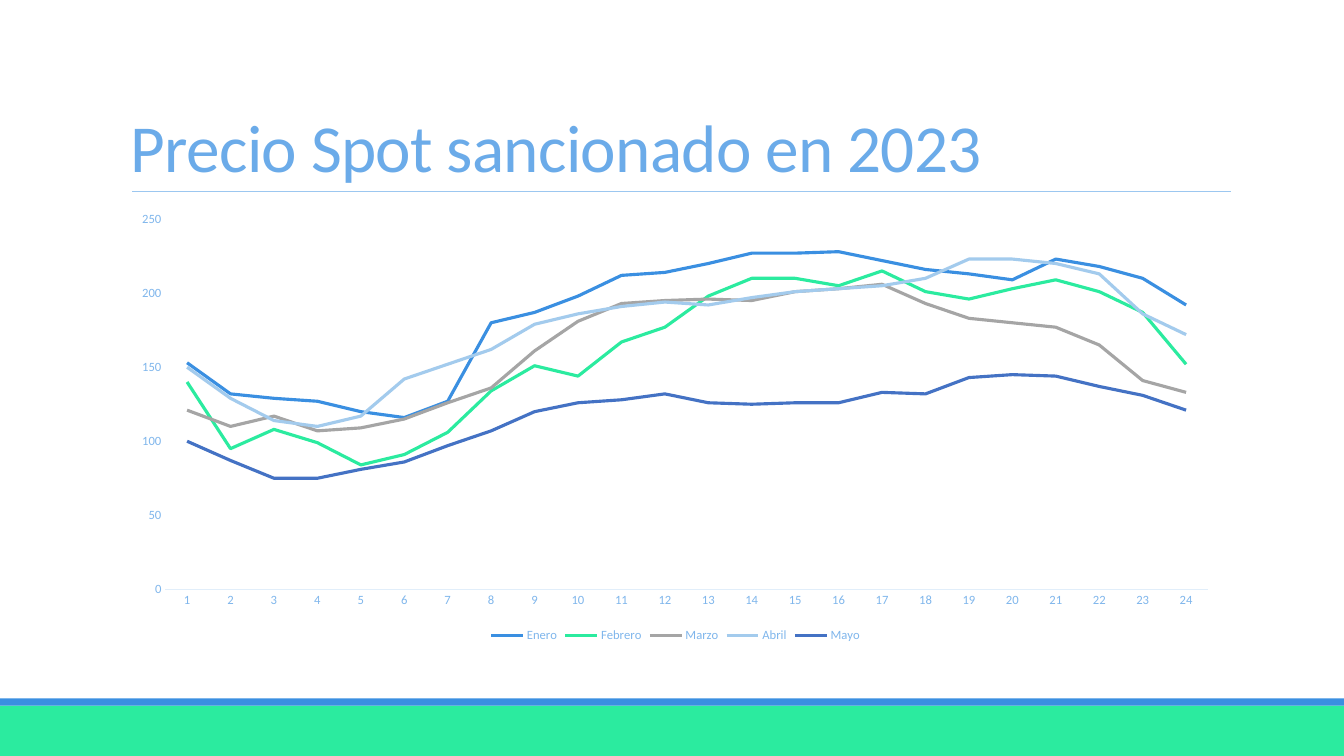
from lxml.etree import SubElement
from pptx import Presentation
from pptx.chart.data import CategoryChartData
from pptx.dml.color import RGBColor
from pptx.enum.chart import XL_CHART_TYPE as ChartType, XL_LEGEND_POSITION as LegendPosition
from pptx.enum.chart import XL_MARKER_STYLE as MarkerStyle, XL_TICK_MARK as TickMark
from pptx.enum.shapes import MSO_CONNECTOR as Connector, MSO_SHAPE as Shape
from pptx.enum.text import MSO_ANCHOR as Anchor
from pptx.oxml.ns import qn
from pptx.util import Inches, Pt

BLUE = RGBColor(0x3A, 0x8F, 0xE1)
GREEN = RGBColor(0x2B, 0xEB, 0x9F)
GRAY = RGBColor(0xA5, 0xA5, 0xA5)
PALE_BLUE = RGBColor(0xA3, 0xCB, 0xED)
DARK_BLUE = RGBColor(0x44, 0x72, 0xC4)
TITLE_BLUE = RGBColor(0x6B, 0xAB, 0xE9)
LABEL_BLUE = RGBColor(0x7F, 0xB6, 0xEC)
RULE_BLUE = RGBColor(0x9C, 0xC7, 0xF0)
AXIS_BLUE = RGBColor(0xE1, 0xEE, 0xFA)

FONT = "Calibri"
TITLE = "Precio Spot sancionado en 2023"
HOURS = range(1, 25)
MONTHS = [
    ("Enero", BLUE, (153, 132, 129, 127, 120, 116, 127, 180, 187, 198, 212, 214,
                     220, 227, 227, 228, 222, 216, 213, 209, 223, 218, 210, 192)),
    ("Febrero", GREEN, (140, 95, 108, 99, 84, 91, 106, 134, 151, 144, 167, 177,
                        198, 210, 210, 205, 215, 201, 196, 203, 209, 201, 187, 152)),
    ("Marzo", GRAY, (121, 110, 117, 107, 109, 115, 126, 136, 161, 181, 193, 195,
                     196, 195, 201, 203, 206, 193, 183, 180, 177, 165, 141, 133)),
    ("Abril", PALE_BLUE, (150, 129, 114, 110, 117, 142, 152, 162, 179, 186, 191, 194,
                          192, 197, 201, 203, 205, 210, 223, 223, 220, 213, 186, 172)),
    ("Mayo", DARK_BLUE, (100, 87, 75, 75, 81, 86, 97, 107, 120, 126, 128, 132,
                         126, 125, 126, 126, 133, 132, 143, 145, 144, 137, 131, 121)),
]

SLIDE_WIDTH, SLIDE_HEIGHT = Inches(13.33), Inches(7.5)
MARGIN, CONTENT_WIDTH = Inches(1.2), Inches(11)
TITLE_TOP, TITLE_BOTTOM = Inches(0.31), Inches(1.9)
CHART_TOP, CHART_HEIGHT = Inches(2.02), Inches(4.4)
FOOTER_HEIGHT, STRIPE_HEIGHT = Inches(0.5), Inches(0.07)
PLOT_SHARES = {"x": 0.04, "y": 0.035, "w": 0.94, "h": 0.835}


def add_band(slide, top, height, color):
    band = slide.shapes.add_shape(Shape.RECTANGLE, 0, top, SLIDE_WIDTH, height)
    band.shadow.inherit = False
    band.fill.solid()
    band.fill.fore_color.rgb = color
    band.line.fill.background()


def add_title_rule(slide):
    left = MARGIN + Inches(0.11)
    rule = slide.shapes.add_connector(
        Connector.STRAIGHT, left, TITLE_BOTTOM, left + Inches(10.9), TITLE_BOTTOM)
    rule.line.color.rgb = RULE_BLUE
    rule.line.width = Pt(0.5)
    SubElement(rule._element.spPr, qn("a:effectLst"))


def add_title(slide):
    box = slide.shapes.add_textbox(
        MARGIN, TITLE_TOP, CONTENT_WIDTH, TITLE_BOTTOM - TITLE_TOP)
    frame = box.text_frame
    frame.word_wrap = True
    frame.vertical_anchor = Anchor.BOTTOM
    frame.text = TITLE
    paragraph = frame.paragraphs[0]
    paragraph.line_spacing = 0.85
    run = paragraph.runs[0]
    style_font(run.font, 48, TITLE_BLUE)
    run.font._element.set("spc", "-50")


def style_font(font, size, color):
    font.name, font.size = FONT, Pt(size)
    font.color.rgb = color


def set_plot_layout(chart):
    """Fix the inner plot area at shares of the chart's size."""
    plot_area = chart._chartSpace.chart.plotArea
    layout = plot_area.find(qn("c:layout"))
    if layout is None:
        layout = SubElement(plot_area, qn("c:layout"))
        plot_area.insert(0, layout)
    manual = SubElement(layout, qn("c:manualLayout"))
    settings = {"layoutTarget": "inner", "xMode": "edge", "yMode": "edge", **PLOT_SHARES}
    for name, value in settings.items():
        SubElement(manual, qn(f"c:{name}")).set("val", str(value))


def add_price_chart(slide):
    data = CategoryChartData()
    data.categories = [str(hour) for hour in HOURS]
    for month, _, prices in MONTHS:
        data.add_series(month, prices)
    chart = slide.shapes.add_chart(
        ChartType.LINE, MARGIN, CHART_TOP, CONTENT_WIDTH, CHART_HEIGHT, data).chart
    chart.has_title = False
    style_font(chart.font, 10, BLUE)
    set_plot_layout(chart)

    chart.plots[0].vary_by_categories = False
    for series, (_, color, _) in zip(chart.series, MONTHS):
        series.smooth = False
        series.marker.style = MarkerStyle.NONE
        series.format.line.color.rgb = color
        series.format.line.width = Pt(2.25)

    for axis in (chart.category_axis, chart.value_axis):
        axis.has_major_gridlines = False
        axis.major_tick_mark = axis.minor_tick_mark = TickMark.NONE
        style_font(axis.tick_labels.font, 9, LABEL_BLUE)
    chart.category_axis.format.line.color.rgb = AXIS_BLUE
    chart.category_axis.format.line.width = Pt(0.75)
    prices_axis = chart.value_axis
    prices_axis.format.line.fill.background()
    prices_axis.minimum_scale, prices_axis.maximum_scale = 0, 250
    prices_axis.major_unit = 50

    chart.has_legend = True
    chart.legend.position = LegendPosition.BOTTOM
    chart.legend.include_in_layout = False
    style_font(chart.legend.font, 9, LABEL_BLUE)


def main():
    presentation = Presentation()
    presentation.slide_width, presentation.slide_height = SLIDE_WIDTH, SLIDE_HEIGHT
    slide = presentation.slides.add_slide(presentation.slide_layouts[6])
    footer_top = SLIDE_HEIGHT - FOOTER_HEIGHT
    add_band(slide, footer_top, FOOTER_HEIGHT, GREEN)
    add_band(slide, footer_top - STRIPE_HEIGHT, STRIPE_HEIGHT, BLUE)
    add_title_rule(slide)
    add_title(slide)
    add_price_chart(slide)
    presentation.save("out.pptx")


if __name__ == "__main__":
    main()
